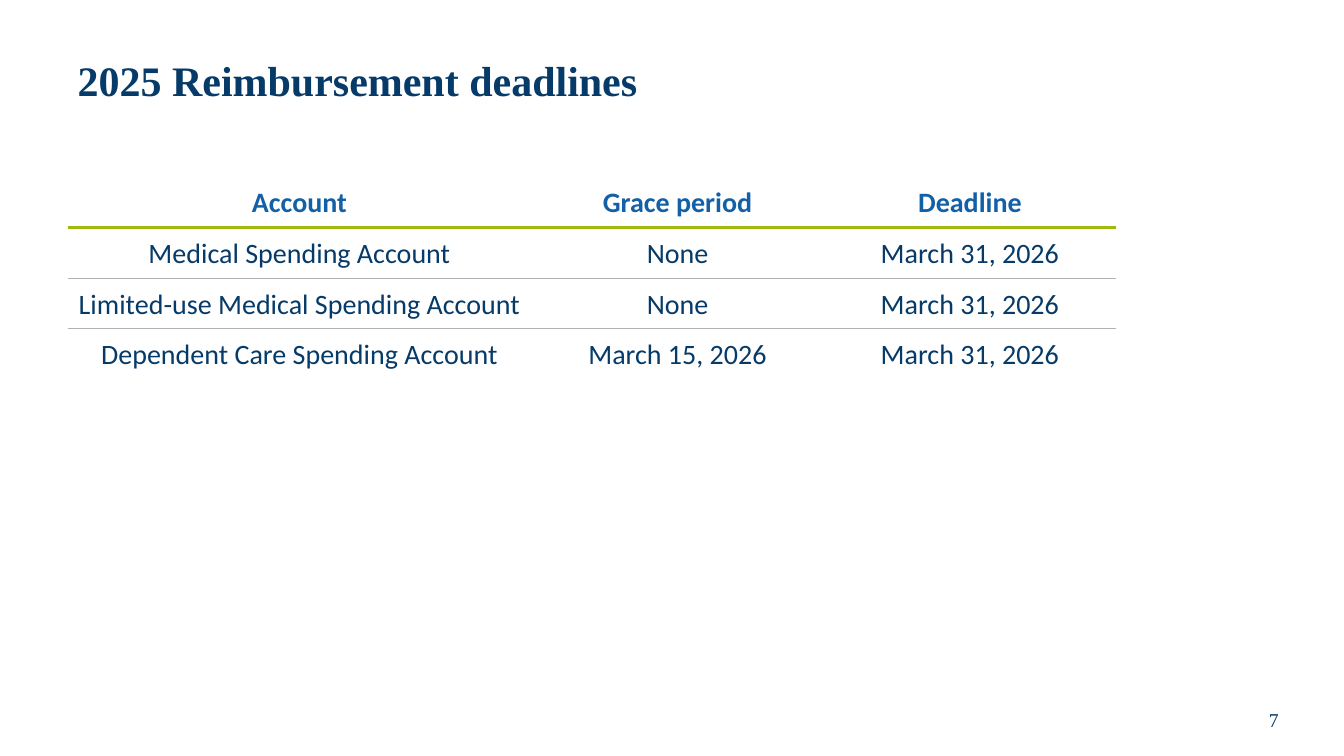
from lxml.etree import SubElement
from pptx import Presentation
from pptx.dml.color import RGBColor
from pptx.enum.text import MSO_ANCHOR, PP_ALIGN
from pptx.oxml.ns import qn
from pptx.util import Inches, Pt

# Content
TITLE = "2025 Reimbursement deadlines"
PAGE_NUMBER = "7"
DEADLINES = [
    ("Account", "Grace period", "Deadline"),
    ("Medical Spending Account", "None", "March 31, 2026"),
    ("Limited-use Medical Spending Account", "None", "March 31, 2026"),
    ("Dependent Care Spending Account", "March 15, 2026", "March 31, 2026"),
]
COLUMN_WIDTHS = (4.6, 2.9, 2.9)
ROW_HEIGHT = 0.5

NAVY = RGBColor(0x06, 0x3A, 0x68)
BLUE = RGBColor(0x12, 0x60, 0xA7)
GREEN = RGBColor(0xA0, 0xB8, 0x10)
GRAY = RGBColor(0xB2, 0xB2, 0xB2)
# Rules between consecutive rows: colour and width in points
ROW_RULES = [(GREEN, 2.25), (GRAY, 0.5), (GRAY, 0.5)]
SERIF, SANS = "Times New Roman", "Calibri"


def style(para, name, size, color, bold=False):
    font = para.font
    font.name, font.size, font.bold = name, Pt(size), bold
    font.color.rgb = color


def add_border(cell, side, rule):
    line = SubElement(cell._tc.get_or_add_tcPr(), qn("a:" + side))
    if rule is None:
        line.set("w", "0")
        SubElement(line, qn("a:noFill"))
        return
    color, width = rule
    line.set("w", str(Pt(width)))
    fill = SubElement(line, qn("a:solidFill"))
    SubElement(fill, qn("a:srgbClr")).set("val", str(color))


deck = Presentation()
deck.slide_width, deck.slide_height = Inches(13.33), Inches(7.5)
page = deck.slides.add_slide(deck.slide_layouts[5])

# Title
title = page.shapes.title
title.left, title.top = Inches(0.67), Inches(0.25)
title.width, title.height = Inches(12), Inches(1.15)
title.text_frame.text = TITLE
title.text_frame.vertical_anchor = MSO_ANCHOR.MIDDLE
para = title.text_frame.paragraphs[0]
para.alignment, para.line_spacing = PP_ALIGN.LEFT, 0.9
style(para, SERIF, 30, NAVY, True)

# Deadline table
table = page.shapes.add_table(
    len(DEADLINES), len(COLUMN_WIDTHS), Inches(0.67), Inches(1.76),
    Inches(sum(COLUMN_WIDTHS)), Inches(ROW_HEIGHT * len(DEADLINES))).table
table.horz_banding = table.first_row = False
for column, width in zip(table.columns, COLUMN_WIDTHS):
    column.width = Inches(width)

rules = [None, *ROW_RULES, None]
for row_index, texts in enumerate(DEADLINES):
    table.rows[row_index].height = Inches(ROW_HEIGHT)
    is_header = row_index == 0
    for column_index, text in enumerate(texts):
        cell = table.cell(row_index, column_index)
        cell.text = text
        cell.vertical_anchor = MSO_ANCHOR.MIDDLE
        add_border(cell, "lnL", None)
        add_border(cell, "lnR", None)
        add_border(cell, "lnT", rules[row_index])
        add_border(cell, "lnB", rules[row_index + 1])
        cell.fill.background()
        para = cell.text_frame.paragraphs[0]
        para.alignment = PP_ALIGN.CENTER
        if not is_header:
            para.line_spacing = 1.07
        style(para, SANS, 20, BLUE if is_header else NAVY, is_header)

# Page number
box = page.shapes.add_textbox(Inches(12.05), Inches(6.89), Inches(1.17), Inches(0.5))
box.text_frame.word_wrap = True
box.text_frame.vertical_anchor = MSO_ANCHOR.MIDDLE
para = box.text_frame.paragraphs[0]
para.text = PAGE_NUMBER
para.alignment = PP_ALIGN.CENTER
style(para, SERIF, 14, NAVY)

deck.save("out.pptx")
